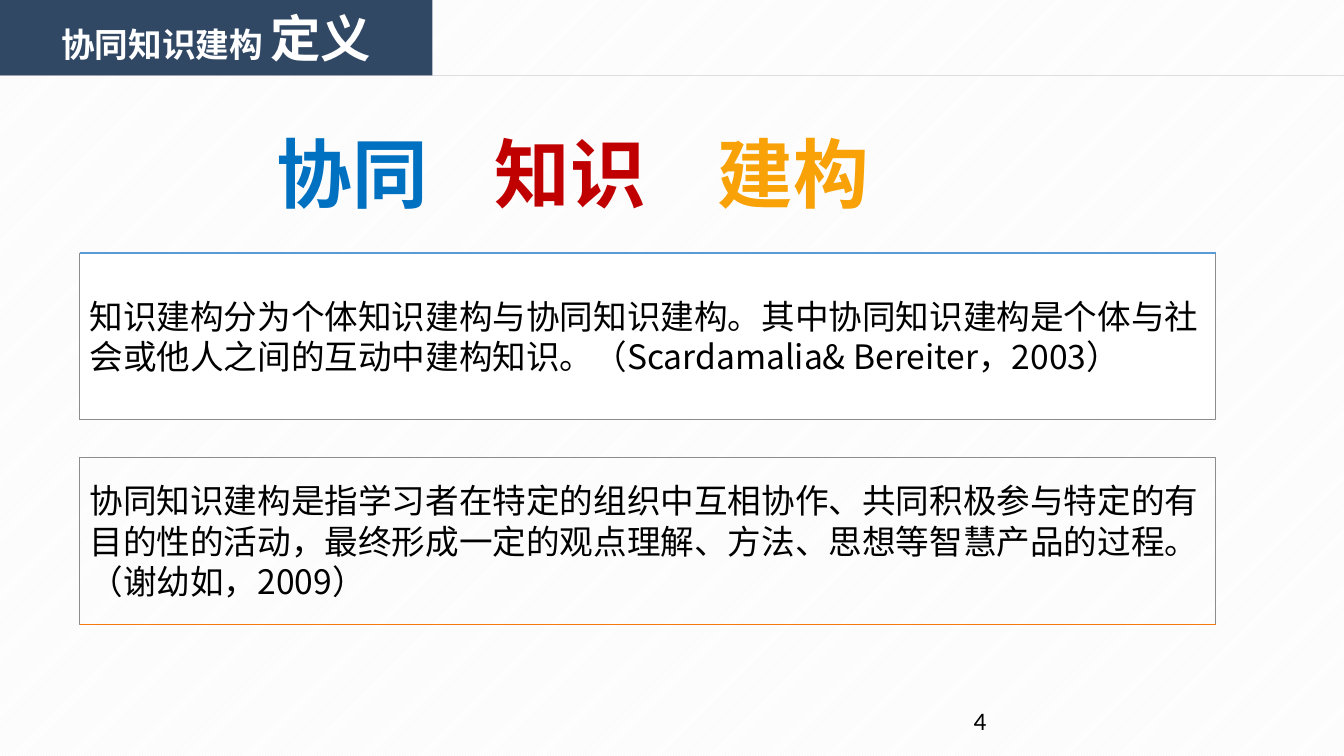
from dataclasses import dataclass

from lxml.etree import SubElement
from pptx import Presentation
from pptx.dml.color import RGBColor
from pptx.enum.dml import MSO_PATTERN
from pptx.enum.shapes import MSO_CONNECTOR, MSO_SHAPE
from pptx.enum.text import MSO_ANCHOR, PP_ALIGN
from pptx.oxml.ns import qn
from pptx.util import Pt


@dataclass(frozen=True)
class Theme:
    font: str = "Noto Sans CJK SC"
    number_font: str = "Calibri"
    black: str = "000000"
    white: str = "FFFFFF"
    stripe: str = "F2F2F2"
    navy: str = "314865"
    rule: str = "BFBFBF"
    frame: str = "8C8C8C"
    frame_blue: str = "5B9BD5"
    frame_orange: str = "F67A0A"
    blue: str = "0070C0"
    red: str = "C00000"
    amber: str = "F8A208"
    number_size: int = 18
    body_size: int = 24
    title_size: int = 36
    keyword_size: int = 54


def color(value):
    return RGBColor.from_string(value)


def write_text(shape, runs, *, font, text_color, bold=False, align=PP_ALIGN.LEFT,
               anchor=MSO_ANCHOR.MIDDLE, space_before=0):
    """Fill the shape with one paragraph made of (text, size) runs."""
    frame = shape.text_frame
    frame.word_wrap = True
    frame.vertical_anchor = anchor
    paragraph = frame.paragraphs[0]
    paragraph.alignment = align
    paragraph.space_before = Pt(space_before)
    for text, size in runs:
        run = paragraph.add_run()
        run.text = text
        run.font.name = font
        run.font.size = Pt(size)
        run.font.bold = bold
        run.font.color.rgb = color(text_color)
        SubElement(run.font._element, qn("a:ea"), typeface=font)


class SlideBuilder:
    def __init__(self, slide, theme):
        self.slide = slide
        self.theme = theme

    def background(self):
        fill = self.slide.background.fill
        fill.patterned()
        fill.pattern = MSO_PATTERN.DARK_UPWARD_DIAGONAL
        fill.fore_color.rgb = color(self.theme.stripe)
        fill.back_color.rgb = color(self.theme.white)

    def rectangle(self, left, top, width, height, fill=None, line=None):
        shape = self.slide.shapes.add_shape(
            MSO_SHAPE.RECTANGLE, Pt(left), Pt(top), Pt(width), Pt(height))
        shape.shadow.inherit = False
        if fill:
            shape.fill.solid()
            shape.fill.fore_color.rgb = color(fill)
        else:
            shape.fill.background()
        if line:
            shape.line.color.rgb = color(line)
            shape.line.width = Pt(0.5)
        else:
            shape.line.fill.background()
        return shape

    def horizontal_line(self, left, right, y, line_color, width=0.5, opacity=100):
        line = self.slide.shapes.add_connector(
            MSO_CONNECTOR.STRAIGHT, Pt(left), Pt(y), Pt(right), Pt(y))
        line.line.color.rgb = color(line_color)
        line.line.width = Pt(width)
        properties = line._element.spPr
        if opacity < 100:
            SubElement(properties.find(".//" + qn("a:srgbClr")), qn("a:alpha"),
                       val=str(opacity * 1000))
        SubElement(properties, qn("a:effectLst"))

    def text_box(self, left, top, width, height, text, size, **text_format):
        box = self.slide.shapes.add_textbox(Pt(left), Pt(top), Pt(width), Pt(height))
        write_text(box, [(text, size)], **text_format)

    def definition(self, top, text, accent_y, accent_color, accent_width,
                   fill=None, space_before=0):
        """Draw a grey-framed definition with one coloured edge."""
        left, width, height = 56.9, 811.4, 118.8
        box = self.rectangle(left, top, width, height, fill, self.theme.frame)
        write_text(box, [(text, self.theme.body_size)], font=self.theme.font,
                   text_color=self.theme.black, space_before=space_before)
        self.horizontal_line(left, left + width, top + accent_y * height,
                             accent_color, accent_width)


def main():
    presentation = Presentation()
    presentation.slide_width = Pt(960)
    presentation.slide_height = Pt(540)
    theme = Theme()
    builder = SlideBuilder(
        presentation.slides.add_slide(presentation.slide_layouts[6]), theme)
    builder.background()

    builder.text_box(688.3, 500.4, 223.9, 28.8, "4", theme.number_size,
                     font=theme.number_font, text_color=theme.black)
    builder.definition(
        326.9,
        "协同知识建构是指学习者在特定的组织中互相协作、共同积极参与特定的有目的性的活动，"
        "最终形成一定的观点理解、方法、思想等智慧产品的过程。（谢幼如，2009）",
        accent_y=1, accent_color=theme.frame_orange, accent_width=0.5, space_before=10)

    header = builder.rectangle(0, 0, 308.9, 54, theme.navy)
    write_text(header, [("协同知识建构 ", theme.body_size), ("定义", theme.title_size)],
               font=theme.font, text_color=theme.white, bold=True, align=PP_ALIGN.CENTER)
    builder.horizontal_line(0, 960, 54, theme.rule, opacity=50)

    builder.definition(
        180.7,
        "知识建构分为个体知识建构与协同知识建构。其中协同知识建构是个体与社会或他人之间的"
        "互动中建构知识。（Scardamalia& Bereiter，2003）",
        accent_y=0, accent_color=theme.frame_blue, accent_width=1, fill=theme.white)

    keywords = [("协同", 190.8, theme.blue), ("知识", 346.3, theme.red),
                ("建构", 505.4, theme.amber)]
    for word, left, word_color in keywords:
        builder.text_box(left, 87.1, 148.3, 72.7, word, theme.keyword_size,
                         font=theme.font, text_color=word_color, bold=True,
                         anchor=MSO_ANCHOR.TOP)

    presentation.save("out.pptx")


if __name__ == "__main__":
    main()
